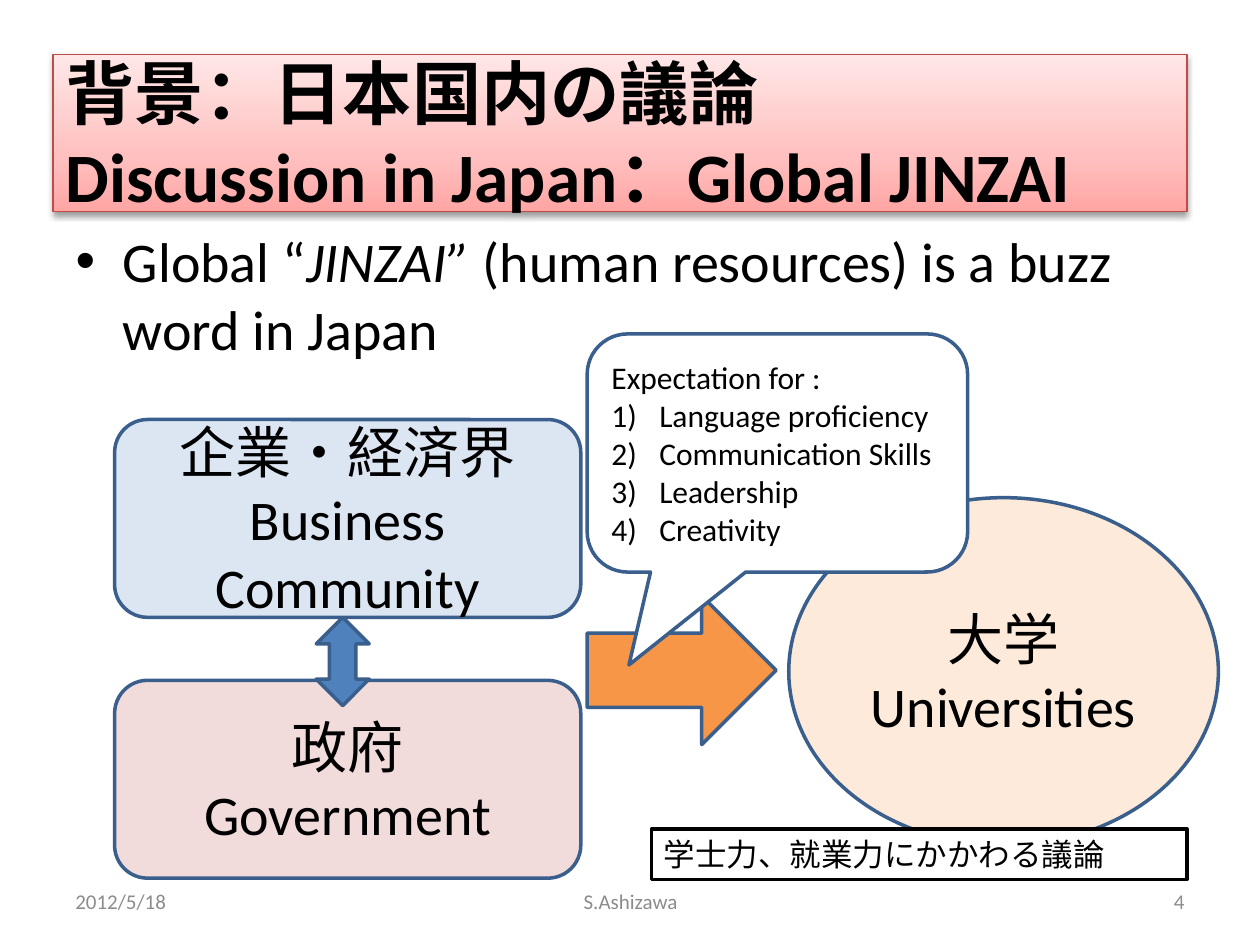
import pptx
import pptx.util
import pptx.dml.color
import pptx.enum.shapes
import pptx.enum.text
import pptx.oxml
import pptx.oxml.ns

Inches, Pt = pptx.util.Inches, pptx.util.Pt
SHAPE = pptx.enum.shapes.MSO_SHAPE
ALIGN = pptx.enum.text.PP_ALIGN
ANCHOR = pptx.enum.text.MSO_ANCHOR
AUTO = pptx.enum.text.MSO_AUTO_SIZE

COLORS = {
    "black": "000000", "white": "FFFFFF", "outline": "3A5F8C", "grey": "8C8C8C",
    "business": "DCE6F2", "government": "F2DCDB", "university": "FDEADA",
    "orange": "F79646", "blue": "4F81BD", "red": "BF4C48",
}
TITLE_STOPS = [(0, "FFA6A5"), (35, "FFC0BF"), (100, "FFE7E7")]
TITLE = ["背景：日本国内の議論", "Discussion in Japan：Global JINZAI"]
BODY = [[("Global “", False), ("JINZAI” ", True),
         ("(human resources) is a buzz word in Japan", False)]]
SKILLS = ["Language proficiency", "Communication Skills", "Leadership", "Creativity"]
SHAPES = [
    (SHAPE.ROUNDED_RECTANGLE, (0.91, 3.33, 3.7, 1.57), "business",
     ["企業・経済界\vBusiness Community"]),
    (SHAPE.ROUNDED_RECTANGLE, (0.91, 5.4, 3.7, 1.57), "government", ["政府", "Government"]),
    (SHAPE.OVAL, (6.26, 3.95, 3.41, 2.76), "university", ["大学\vUniversities"]),
    (SHAPE.RIGHT_ARROW, (4.66, 4.73, 1.5, 1.18), "orange", []),
]
FOOTERS = [
    ("2012/5/18", 0.5, 2.33, ALIGN.LEFT),
    ("S.Ashizawa", 3.42, 3.17, ALIGN.CENTER),
    ("4", 7.17, 2.33, ALIGN.RIGHT),
]


def rgb(name):
    return pptx.dml.color.RGBColor.from_string(COLORS[name])


def place(sp, box):
    sp.left, sp.top, sp.width, sp.height = map(Inches, box)


def write(sp, text, size=32, color="black", bold=None, align=None, anchor=ANCHOR.MIDDLE):
    tf = sp.text_frame
    tf.word_wrap = True
    tf.auto_size = AUTO.NONE
    tf.vertical_anchor = anchor
    for i, line in enumerate(text):
        p = tf.add_paragraph() if i else tf.paragraphs[0]
        p.alignment = align
        for j, part in enumerate([(line, None)] if isinstance(line, str) else line):
            for k, piece in enumerate(part[0].split("\v")):
                if k:
                    p.add_line_break()
                r = p.add_run()
                r.text = piece
                r.font.name = "Calibri"
                r.font.size = Pt(size)
                r.font.bold = bold
                r.font.italic = part[1]
                r.font.color.rgb = rgb(color)


def add_shape(s, kind, box, fill, line="outline"):
    sp = s.shapes.add_shape(kind, *map(Inches, box))
    sp.shadow.inherit = False
    sp.fill.solid()
    sp.fill.fore_color.rgb = rgb(fill)
    sp.line.color.rgb = rgb(line)
    sp.line.width = Pt(2)
    return sp


def append_xml(parent, xml):
    tag, rest = xml.split(" ", 1)
    parent.append(pptx.oxml.parse_xml(f'{tag} {pptx.oxml.ns.nsdecls("a")} {rest}'))


def style_title(sp):
    props = sp._element.spPr
    stops = "".join(f'<a:gs pos="{pos * 1000}"><a:srgbClr val="{color}"/></a:gs>'
                    for pos, color in TITLE_STOPS)
    append_xml(props, f'<a:gradFill rotWithShape="1"><a:gsLst>{stops}</a:gsLst>'
                      '<a:lin ang="16200000" scaled="1"/></a:gradFill>')
    sp.line.color.rgb = rgb("red")
    sp.line.width = Pt(0.75)
    append_xml(props, '<a:effectLst ><a:outerShdw '
                      f'blurRad="{Pt(3.1)}" dist="{Pt(1.6)}" dir="5400000" rotWithShape="0">'
                      '<a:srgbClr val="000000"><a:alpha val="38000"/></a:srgbClr>'
                      '</a:outerShdw></a:effectLst>')


def number(p):
    props = p._p.get_or_add_pPr()
    props.set("marL", str(Inches(0.38)))
    props.set("indent", str(-Inches(0.38)))
    append_xml(props, '<a:buFont typeface="+mj-lt"/>')
    append_xml(props, '<a:buAutoNum type="arabicParenR"/>')


def main():
    prs = pptx.Presentation()
    prs.slide_width, prs.slide_height = Inches(10), Inches(7.5)
    s = prs.slides.add_slide(prs.slide_layouts[1])

    title, body = s.placeholders
    place(title, (0.42, 0.43, 9, 1.25))
    style_title(title)
    write(title, TITLE, size=39.6, bold=True, align=ALIGN.LEFT)
    place(body, (0.5, 1.75, 9, 4.95))
    write(body, BODY, anchor=ANCHOR.TOP)

    for kind, box, fill, text in SHAPES:
        sp = add_shape(s, kind, box, fill)
        write(sp, text, align=ALIGN.CENTER)

    callout = add_shape(s, SHAPE.ROUNDED_RECTANGULAR_CALLOUT, (4.66, 2.65, 3.02, 1.89), "white")
    for i, value in enumerate((-0.39, 0.89, 0.17)):
        callout.adjustments[i] = value
    write(callout, ["Expectation for :"] + SKILLS, size=18, align=ALIGN.LEFT)
    for p in callout.text_frame.paragraphs[1:]:
        number(p)

    arrow = add_shape(s, SHAPE.LEFT_RIGHT_ARROW, (2.37, 5.04, 0.7, 0.42), "blue")
    arrow.rotation = 90

    note = add_shape(s, SHAPE.RECTANGLE, (5.17, 6.58, 4.25, 0.4), "white", "black")
    write(note, ["学士力、就業力にかかわる議論"], size=18, align=ALIGN.LEFT, anchor=ANCHOR.TOP)

    for text, left, width, align in FOOTERS:
        sp = s.shapes.add_textbox(*map(Inches, (left, 6.95, width, 0.4)))
        write(sp, [text], size=12, color="grey", align=align)

    prs.save("out.pptx")


if __name__ == "__main__":
    main()
